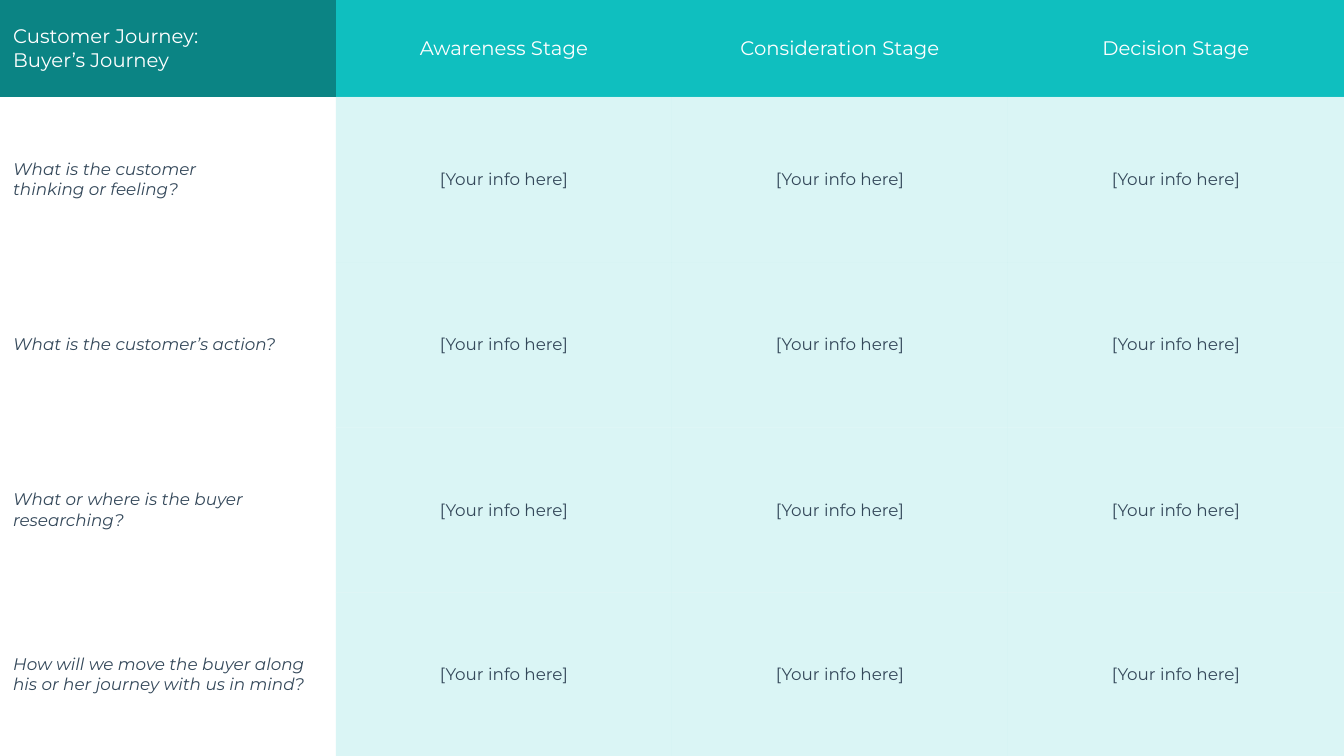
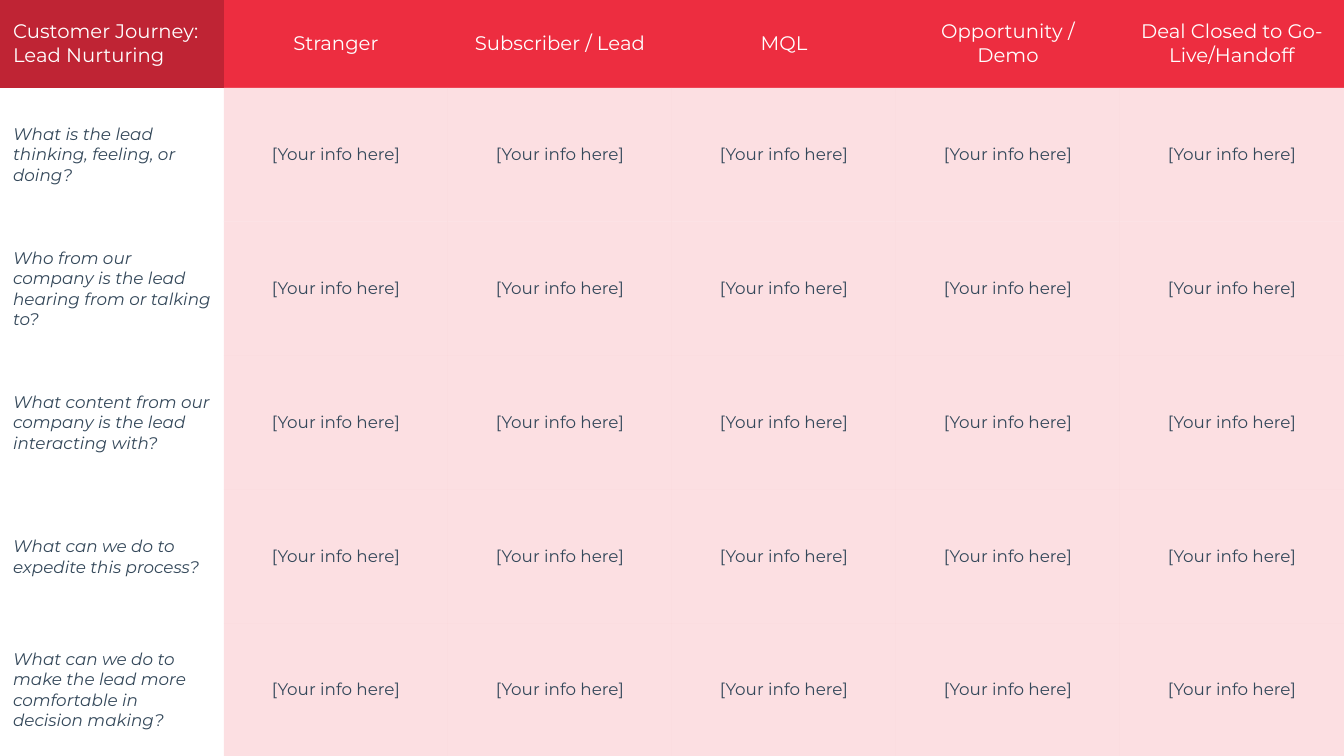
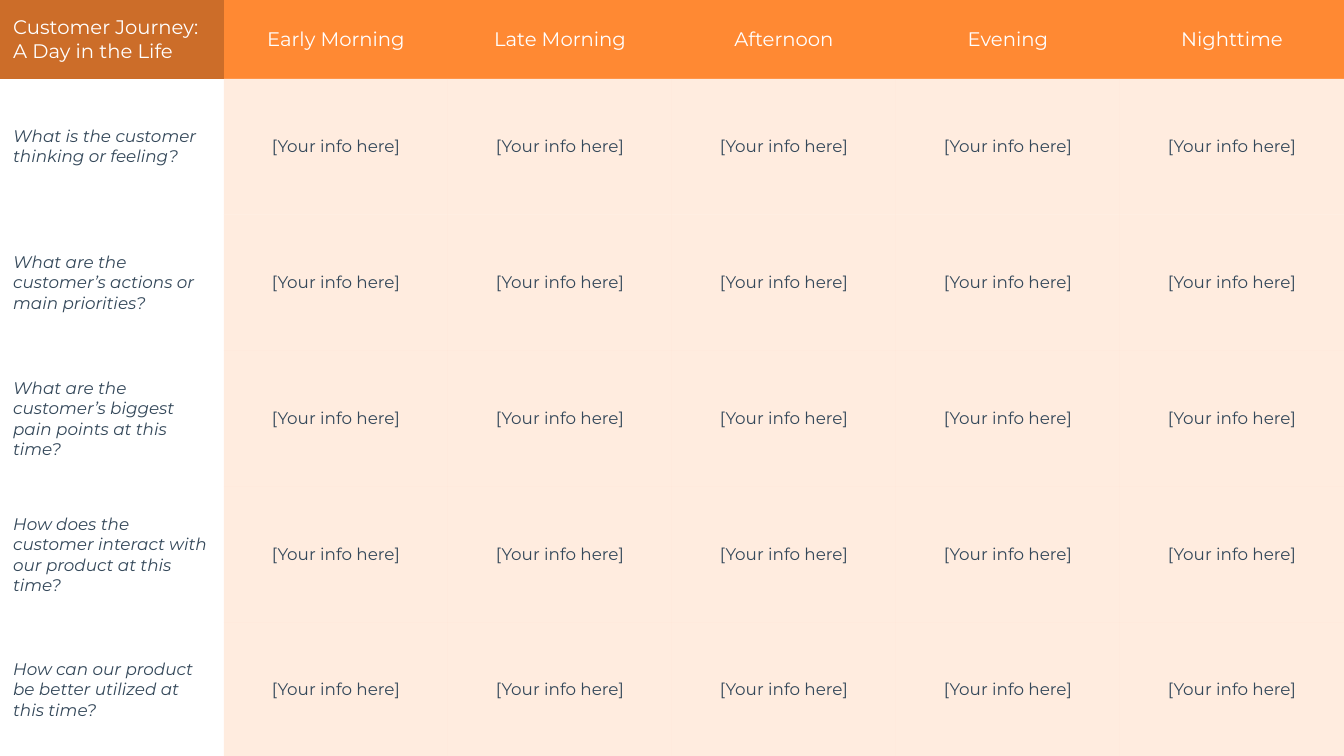
import dataclasses

import lxml.etree
import pptx
import pptx.dml.color
import pptx.enum.text
import pptx.oxml.ns
import pptx.util


@dataclasses.dataclass(frozen=True)
class Theme:
    font: str = "Montserrat"
    head_size: int = 14
    body_size: int = 12
    white: str = "FFFFFF"
    ink: str = "34485A"
    inset: float = 0.13
    tint_alpha: int = 50
    # Each palette: corner cell, stage headings, tint of the answers
    teal: tuple = ("0B8484", "0FBFBF", "B7ECEC")
    red: tuple = ("BF2434", "ED2D40", "FBC0C6")
    orange: tuple = ("CC6D29", "FF8933", "FFDBC1")


THEME = Theme()
WIDTH, HEIGHT = 13.33, 7.5
PLAIN_STYLE = "{2D5ABB26-0587-4C30-8999-92F81FD0307C}"
ANSWER = "[Your info here]"

JOURNEYS = [
    dict(
        title="Customer Journey:\nBuyer’s Journey",
        palette=THEME.teal, head_row=0.96, body_row=1.64,
        stages=["Awareness Stage", "Consideration Stage", "Decision Stage"],
        questions=[
            "What is the customer\nthinking or feeling?",
            "What is the customer’s action?",
            "What or where is the buyer researching?",
            "How will we move the buyer along his or her journey with us in mind?",
        ],
    ),
    dict(
        title="Customer Journey: Lead Nurturing",
        palette=THEME.red, head_row=0.87, body_row=1.33,
        stages=["Stranger", "Subscriber / Lead", "MQL", "Opportunity / Demo",
                "Deal Closed to Go-Live/Handoff"],
        questions=[
            "What is the lead\nthinking, feeling, or doing?",
            "Who from our company is the lead hearing from or talking to?",
            "What content from our company is the lead interacting with?",
            "What can we do to expedite this process?",
            "What can we do to make the lead more comfortable in decision making?",
        ],
    ),
    dict(
        title="Customer Journey:\nA Day in the Life",
        palette=THEME.orange, head_row=0.78, body_row=1.35,
        stages=["Early Morning", "Late Morning", "Afternoon", "Evening",
                "Nighttime"],
        questions=[
            "What is the customer\nthinking or feeling?",
            "What are the customer’s actions or main priorities?",
            "What are the customer’s biggest pain points at this time?",
            "How does the customer interact with our product at this time?",
            "How can our product be better utilized at this time?",
        ],
    ),
]


def rgb(value):
    return pptx.dml.color.RGBColor.from_string(value)


def write_text(tf, text, *, size, color, italic=False, centered=False):
    """Write one paragraph for each line of the text."""
    align = pptx.enum.text.PP_ALIGN
    for i, line in enumerate(text.split("\n")):
        p = tf.add_paragraph() if i else tf.paragraphs[0]
        p.alignment = align.CENTER if centered else align.LEFT
        r = p.add_run()
        r.text = line
        r.font.name = THEME.font
        r.font.size = pptx.util.Pt(size)
        r.font.italic = italic
        r.font.color.rgb = rgb(color)


def fill_cell(cell, color=None, alpha=None):
    if color is None:
        cell.fill.background()
        return
    cell.fill.solid()
    cell.fill.fore_color.rgb = rgb(color)
    if alpha is not None:
        qn = pptx.oxml.ns.qn
        clr = cell.fill._xPr.find(qn("a:solidFill")).find(qn("a:srgbClr"))
        lxml.etree.SubElement(clr, qn("a:alpha")).set("val", str(alpha * 1000))


def set_cell(cell, text, *, fill=None, alpha=None, **text_format):
    inset = pptx.util.Inches(THEME.inset)
    cell.margin_left = cell.margin_right = inset
    cell.margin_top = cell.margin_bottom = inset
    cell.vertical_anchor = pptx.enum.text.MSO_ANCHOR.MIDDLE
    fill_cell(cell, fill, alpha)
    write_text(cell.text_frame, text, **text_format)


def add_grid(s, box, n_rows, n_cols, head_row, body_row):
    """Add a plain table of equal columns; the last row takes what is left."""
    frame = s.shapes.add_table(n_rows, n_cols, *map(pptx.util.Inches, box))
    table = frame.table
    table.first_row = table.horz_banding = False
    table._tbl.tblPr.find(pptx.oxml.ns.qn("a:tableStyleId")).text = PLAIN_STYLE
    for column in table.columns:
        column.width = pptx.util.Inches(box[2] / n_cols)
    heights = [head_row] + [body_row] * (n_rows - 2)
    heights.append(box[3] - sum(heights))
    for row, height in zip(table.rows, heights):
        row.height = pptx.util.Inches(height)
    return table


def add_journey(s, box, title, palette, head_row, body_row, stages, questions):
    corner, heading, tint = palette
    table = add_grid(s, box, len(questions) + 1, len(stages) + 1,
                     head_row, body_row)
    head = dict(size=THEME.head_size, color=THEME.white)
    body = dict(size=THEME.body_size, color=THEME.ink)

    # Heading row
    set_cell(table.cell(0, 0), title, fill=corner, **head)
    for col, stage in enumerate(stages, 1):
        set_cell(table.cell(0, col), stage, fill=heading, centered=True, **head)

    # Questions and their answers
    for row, question in enumerate(questions, 1):
        set_cell(table.cell(row, 0), question, italic=True, **body)
        for col in range(1, len(stages) + 1):
            set_cell(table.cell(row, col), ANSWER, fill=tint,
                     alpha=THEME.tint_alpha, centered=True, **body)


def main():
    prs = pptx.Presentation()
    prs.slide_width = pptx.util.Inches(WIDTH)
    prs.slide_height = pptx.util.Inches(HEIGHT)
    for journey in JOURNEYS:
        s = prs.slides.add_slide(prs.slide_layouts[6])
        add_journey(s, (0, 0, WIDTH, HEIGHT), **journey)
    prs.save("out.pptx")


if __name__ == "__main__":
    main()
